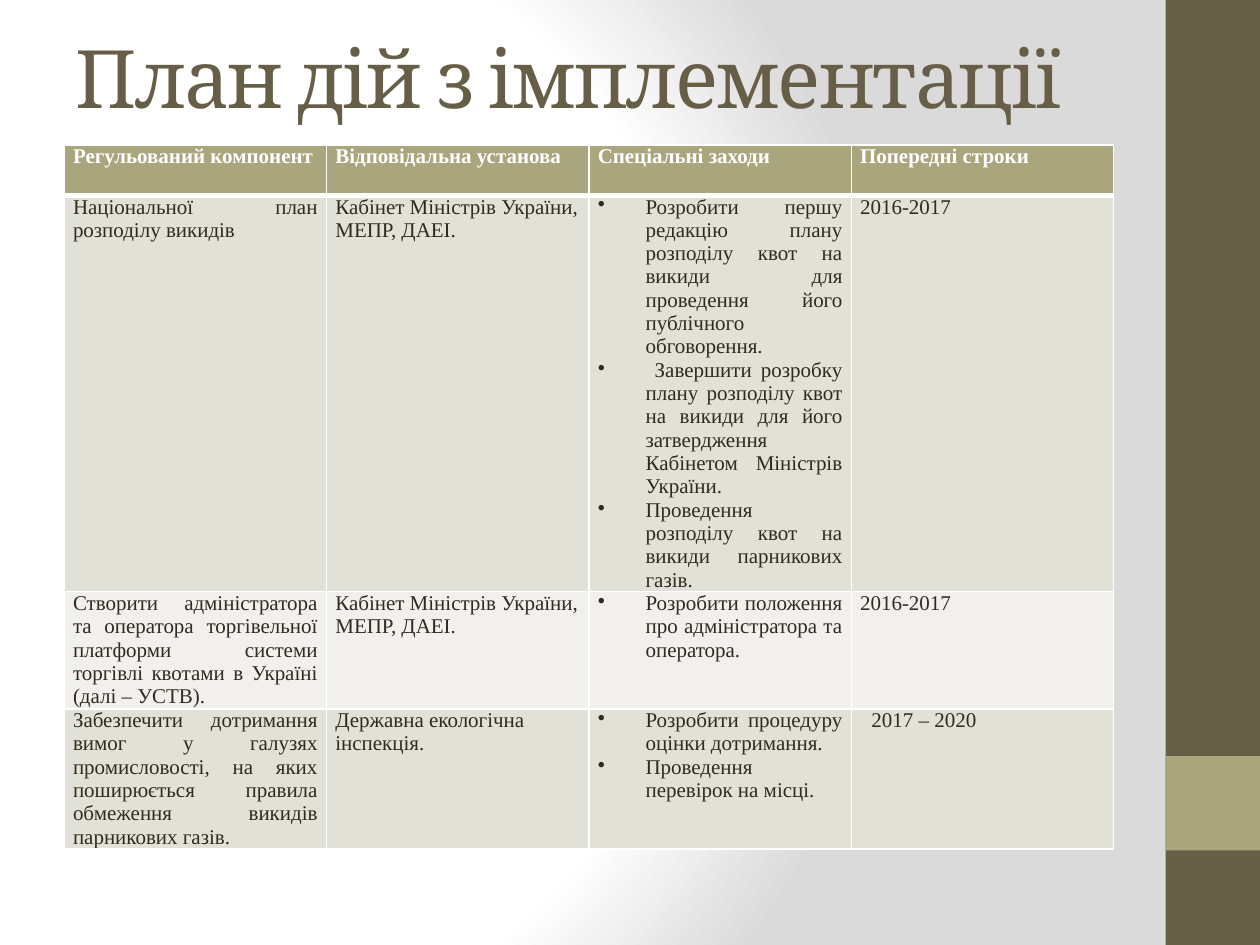
import pptx
import pptx.util
import pptx.dml.color
import pptx.enum.shapes
import pptx.enum.text
import pptx.oxml
import pptx.oxml.ns

Inches = pptx.util.Inches
Pt = pptx.util.Pt
namespaces = pptx.oxml.ns.nsdecls("a", "p")


def color(hex_string):
    return pptx.dml.color.RGBColor.from_string(hex_string)


def border(side, width):
    return pptx.oxml.parse_xml(
        f'<a:{side} {namespaces} w="{Pt(width)}"><a:solidFill>'
        f'<a:srgbClr val="FFFFFF"/></a:solidFill></a:{side}>'
    )


presentation = pptx.Presentation()
presentation.slide_width = Inches(10)
presentation.slide_height = Inches(7.5)
slide = presentation.slides.add_slide(presentation.slide_layouts[5])

background = pptx.oxml.parse_xml(
    f'<p:bg {namespaces}><p:bgPr><a:gradFill rotWithShape="1"><a:gsLst>'
    '<a:gs pos="0"><a:srgbClr val="FFFFFF"/></a:gs>'
    '<a:gs pos="75000"><a:srgbClr val="FFFFFF"/></a:gs>'
    '<a:gs pos="100000"><a:srgbClr val="DADADA"/></a:gs></a:gsLst>'
    '<a:path path="circle"><a:fillToRect l="20000" t="50000" r="100000" b="50000"/></a:path>'
    '</a:gradFill><a:effectLst/></p:bgPr></p:bg>'
)
slide.element.cSld.insert(0, background)

for top, height, fill in [(0, 7.5, "675E47"), (6, 0.75, "A9A57C")]:
    bar = slide.shapes.add_shape(
        pptx.enum.shapes.MSO_SHAPE.RECTANGLE,
        Inches(9.25), Inches(top), Inches(0.75), Inches(height),
    )
    bar.shadow.inherit = False
    bar.fill.solid()
    bar.fill.fore_color.rgb = color(fill)
    bar.line.fill.background()

title = slide.shapes.title
title.left, title.top = Inches(0.5), Inches(0.3)
title.width, title.height = Inches(8.33), Inches(0.61)
title.text_frame.word_wrap = True
title.text_frame.auto_size = pptx.enum.text.MSO_AUTO_SIZE.NONE
title.text_frame.vertical_anchor = pptx.enum.text.MSO_ANCHOR.MIDDLE
paragraph = title.text_frame.paragraphs[0]
paragraph.alignment = pptx.enum.text.PP_ALIGN.LEFT
run = paragraph.add_run()
run.text = "План дій з імплементації"
run.font.name = "Cambria"
run.font.size = Pt(46)
run.font.color.rgb = color("675E47")
run._r.get_or_add_rPr().set("spc", "-100")

rows = [
    [
        ["Регульований компонент"],
        ["Відповідальна установа"],
        ["Спеціальні заходи"],
        ["Попередні строки"],
    ],
    [
        ["Національної план розподілу викидів"],
        ["Кабінет Міністрів України, МЕПР, ДАЕІ."],
        [
            "Розробити першу редакцію плану розподілу квот на викиди для проведення його публічного обговорення.",
            " Завершити розробку плану розподілу квот на викиди для його затвердження Кабінетом Міністрів України.",
            "Проведення розподілу квот на викиди парникових газів.",
        ],
        ["2016-2017"],
    ],
    [
        ["Створити адміністратора та оператора торгівельної платформи системи торгівлі квотами в Україні (далі – УСТВ)."],
        ["Кабінет Міністрів України, МЕПР, ДАЕІ."],
        ["Розробити положення про адміністратора та оператора."],
        ["2016-2017"],
    ],
    [
        ["Забезпечити дотримання вимог у галузях промисловості, на яких поширюється правила обмеження викидів парникових газів."],
        ["Державна екологічна інспекція."],
        ["Розробити процедуру оцінки дотримання.", "Проведення перевірок на місці."],
        ["2017 – 2020"],
    ],
]
row_heights = [0.4, 3.14, 0.93, 1.11]
row_fills = ["A9A57C", "E2E1D7", "F1F0EC", "E2E1D7"]

table = slide.shapes.add_table(
    4, 4, Inches(0.51), Inches(1.15), Inches(8.33), Inches(sum(row_heights))
).table
for row, height in zip(table.rows, row_heights):
    row.height = Inches(height)

for row_index, row_texts in enumerate(rows):
    header = row_index == 0
    for column_index, texts in enumerate(row_texts):
        cell = table.cell(row_index, column_index)
        cell.margin_left = cell.margin_right = Inches(0.07)
        cell.margin_top = cell.margin_bottom = 0
        cell.fill.solid()
        cell.fill.fore_color.rgb = color(row_fills[row_index])
        widths = {"lnL": 1, "lnR": 1, "lnT": 3 if row_index == 1 else 1, "lnB": 3 if header else 1}
        for position, (side, width) in enumerate(widths.items()):
            cell._tc.get_or_add_tcPr().insert(position, border(side, width))
        for text_index, text in enumerate(texts):
            frame = cell.text_frame
            paragraph = frame.add_paragraph() if text_index else frame.paragraphs[0]
            left_aligned = column_index == 1 and not header
            paragraph.alignment = (
                pptx.enum.text.PP_ALIGN.LEFT if left_aligned else pptx.enum.text.PP_ALIGN.JUSTIFY
            )
            properties = paragraph._p.get_or_add_pPr()
            if column_index == 2 and not header:
                properties.set("marL", str(Inches(0.38)))
                properties.set("indent", str(Inches(-0.38)))
                properties.append(pptx.oxml.parse_xml(f'<a:buChar {namespaces} char="•"/>'))
            elif text == "2017 – 2020":
                properties.set("marL", str(Inches(0.09)))
            run = paragraph.add_run()
            run.text = text
            run.font.name = "Times New Roman"
            run.font.size = Pt(12)
            run.font.bold = header
            run.font.color.rgb = color("FFFFFF" if header else "2F2B20")

presentation.save("out.pptx")
